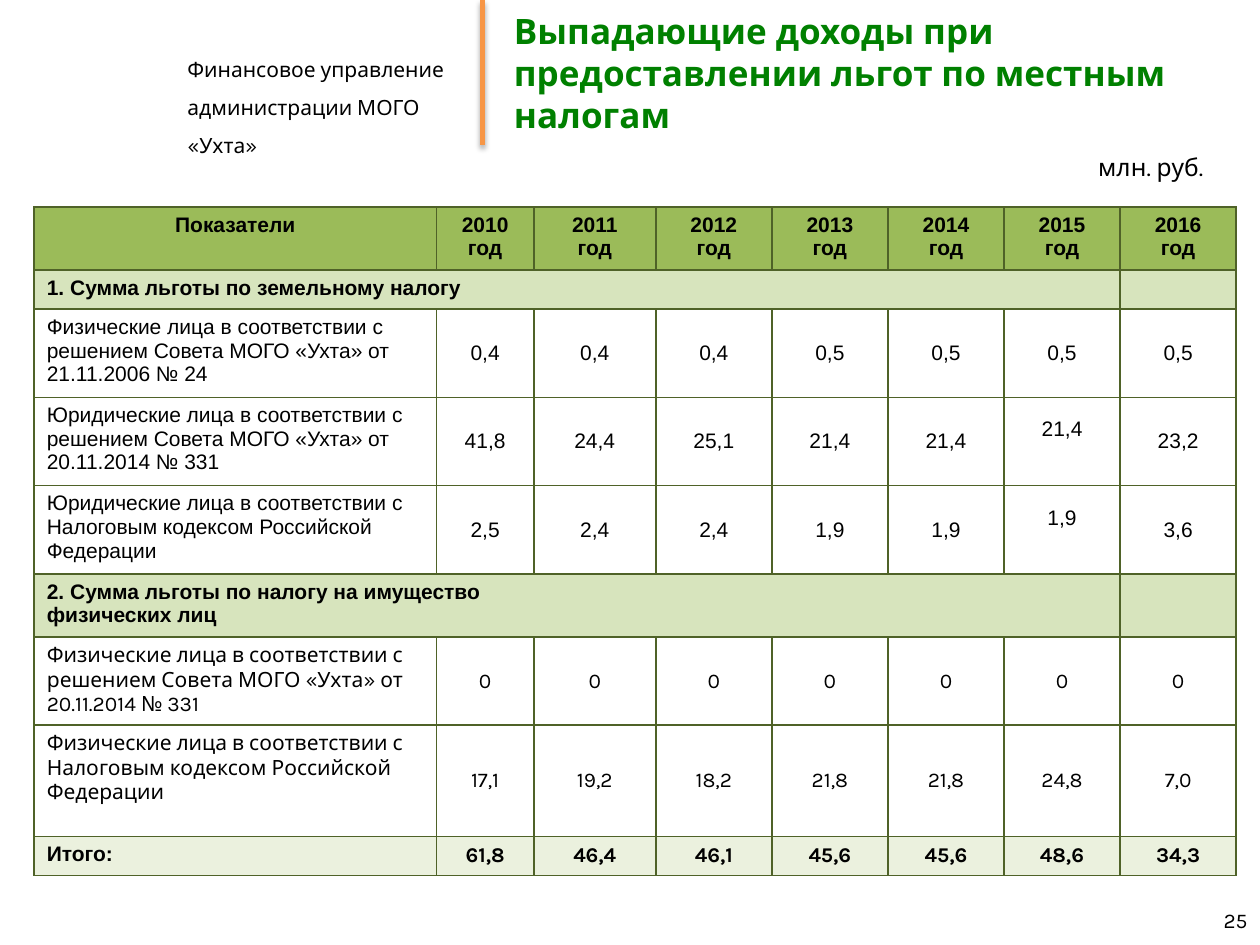
from dataclasses import dataclass

from lxml import etree
from pptx import Presentation
from pptx.dml.color import RGBColor
from pptx.enum.shapes import MSO_CONNECTOR
from pptx.enum.text import MSO_ANCHOR, PP_ALIGN
from pptx.oxml import parse_xml
from pptx.oxml.ns import nsdecls, qn
from pptx.util import Cm, Pt

LEFT, CENTER, RIGHT = PP_ALIGN.LEFT, PP_ALIGN.CENTER, PP_ALIGN.RIGHT
TOP, MIDDLE = MSO_ANCHOR.TOP, MSO_ANCHOR.MIDDLE
STRAIGHT = MSO_CONNECTOR.STRAIGHT


@dataclass(frozen=True)
class Theme:
    text: str = "000000"
    title: str = "008000"
    accent: str = "F79646"
    border: str = "4F6228"
    header: str = "9BBB59"
    section: str = "D7E4BD"
    total: str = "EBF1DE"
    heading_font: str = "Karla"
    table_font: str = "Arial"
    small: int = 12
    medium: int = 14
    large: int = 20


class SlideBuilder:
    def __init__(self, slide, theme):
        self.slide = slide
        self.theme = theme

    def style(self, p, size=None, font=None, color=None, bold=False, align=LEFT):
        p.alignment = align
        p.font.size = Pt(size or self.theme.small)
        p.font.name = font or self.theme.heading_font
        p.font.bold = bold
        p.font.color.rgb = RGBColor.from_string(color or self.theme.text)

    def fill_text(self, tf, text, **style):
        """Put each line of text in a paragraph of its own."""
        tf.text = text
        for p in tf.paragraphs:
            self.style(p, **style)

    def text(self, x, y, w, h, text, anchor=TOP, spacing=None, **style):
        sp = self.slide.shapes.add_textbox(Cm(x), Cm(y), Cm(w), Cm(h))
        tf = sp.text_frame
        tf.word_wrap = True
        tf.vertical_anchor = anchor
        self.fill_text(tf, text, **style)
        if spacing:
            for p in tf.paragraphs:
                p.line_spacing = spacing

    def shadowed_line(self, x1, y1, x2, y2, width):
        line = self.slide.shapes.add_connector(STRAIGHT, Cm(x1), Cm(y1), Cm(x2), Cm(y2))
        line.line.width = Pt(width)
        line.line.color.rgb = RGBColor.from_string(self.theme.accent)
        line._element.spPr.append(parse_xml(
            f'<a:effectLst {nsdecls("a")}>'
            f'<a:outerShdw blurRad="{Pt(3.1)}" dist="{Pt(1.8)}" dir="5400000" rotWithShape="0">'
            '<a:srgbClr val="000000"><a:alpha val="35000"/></a:srgbClr>'
            '</a:outerShdw></a:effectLst>'))

    def table(self, x, y, widths, heights):
        frame = self.slide.shapes.add_table(
            len(heights), len(widths), Cm(x), Cm(y), Cm(sum(widths)), Cm(sum(heights)))
        table = frame.table
        table.first_row = table.horz_banding = False
        for column, width in zip(table.columns, widths):
            column.width = Cm(width)
        for row, height in zip(table.rows, heights):
            row.height = Cm(height)
        return table

    def cell(self, cell, text, fill=None, anchor=TOP, **style):
        self.fill_text(cell.text_frame, text, **style)
        cell.vertical_anchor = anchor
        self.borders(cell)
        if fill:
            cell.fill.solid()
            cell.fill.fore_color.rgb = RGBColor.from_string(fill)
        else:
            cell.fill.background()

    def borders(self, cell):
        tcPr = cell._tc.get_or_add_tcPr()
        for side in ("a:lnL", "a:lnR", "a:lnT", "a:lnB"):
            ln = etree.SubElement(tcPr, qn(side), w=str(Pt(1)))
            fill = etree.SubElement(ln, qn("a:solidFill"))
            etree.SubElement(fill, qn("a:srgbClr"), val=self.theme.border)


YEARS = range(2010, 2017)
LAND_ROWS = [
    ("Физические лица в соответствии с решением Совета МОГО «Ухта» от 21.11.2006 № 24",
     "0,4 0,4 0,4 0,5 0,5 0,5 0,5"),
    ("Юридические лица в соответствии с решением Совета МОГО «Ухта» от 20.11.2014 № 331",
     "41,8 24,4 25,1 21,4 21,4 21,4 23,2"),
    ("Юридические лица в соответствии с Налоговым кодексом Российской Федерации",
     "2,5 2,4 2,4 1,9 1,9 1,9 3,6"),
]
PROPERTY_ROWS = [
    ("Физические лица в соответствии с решением Совета МОГО «Ухта» от 20.11.2014 № 331",
     "0 0 0 0 0 0 0"),
    ("Физические лица в соответствии с Налоговым кодексом Российской Федерации",
     "17,1 19,2 18,2 21,8 21,8 24,8 7,0"),
]
TOTALS = "61,8 46,4 46,1 45,6 45,6 48,6 34,3"
COLUMN_WIDTHS = [8.11, 1.96, 2.46] + [2.34] * 5
ROW_HEIGHTS = [1.24, 0.79] + [1.68] * 3 + [1.19, 1.74, 2.24, 0.79]


def add_benefits_table(b):
    theme = b.theme
    arial, karla = theme.table_font, theme.heading_font
    table = b.table(0.69, 4.17, COLUMN_WIDTHS, ROW_HEIGHTS)

    def section(row, title):
        last = len(COLUMN_WIDTHS) - 1
        for col in range(last + 1):
            b.cell(table.cell(row, col), "" if col else title,
                   fill=theme.section, font=arial, bold=True)
        table.cell(row, 0).merge(table.cell(row, last - 1))

    def data(row, label, values, label_font, value_font, **style):
        b.cell(table.cell(row, 0), label, font=label_font, **style)
        for col, value in enumerate(values.split(), 1):
            b.cell(table.cell(row, col), value, anchor=MIDDLE,
                   font=value_font, align=CENTER, **style)

    header = ["Показатели"] + [f"{year}\nгод" for year in YEARS]
    header[1] = "2010 год"
    for col, text in enumerate(header):
        b.cell(table.cell(0, col), text, fill=theme.header,
               font=arial, bold=True, align=CENTER)

    section(1, "1. Сумма льготы по земельному налогу")
    for row, (label, values) in enumerate(LAND_ROWS, 2):
        data(row, label, values, arial, arial)
    for row in (3, 4):
        table.cell(row, 6).margin_bottom = Cm(0.61)

    section(5, "2. Сумма льготы по налогу на имущество\nфизических лиц")
    for row, (label, values) in enumerate(PROPERTY_ROWS, 6):
        data(row, label, values, karla, karla)
    data(8, "Итого:", TOTALS, arial, karla, fill=theme.total, bold=True)


def main():
    prs = Presentation()
    prs.slide_width, prs.slide_height = Cm(25.4), Cm(19.05)
    theme = Theme()
    b = SlideBuilder(prs.slides.add_slide(prs.slide_layouts[6]), theme)

    b.text(3.53, 0.76, 6.35, 1.68,
           "Финансовое управление\nадминистрации МОГО «Ухта»", spacing=1.5)
    b.shadowed_line(9.73, 0, 9.73, 2.92, 3)
    b.text(10.11, 0, 15.29, 2.92,
           "Выпадающие доходы при предоставлении льгот по местным налогам",
           anchor=MIDDLE, size=theme.large, color=theme.title, bold=True)
    b.text(19.48, 18.03, 5.92, 1.02, "25", anchor=MIDDLE, align=RIGHT)
    add_benefits_table(b)
    b.text(21.89, 2.95, 3, 0.86, "млн. руб.", size=theme.medium)
    prs.save("out.pptx")


if __name__ == "__main__":
    main()
